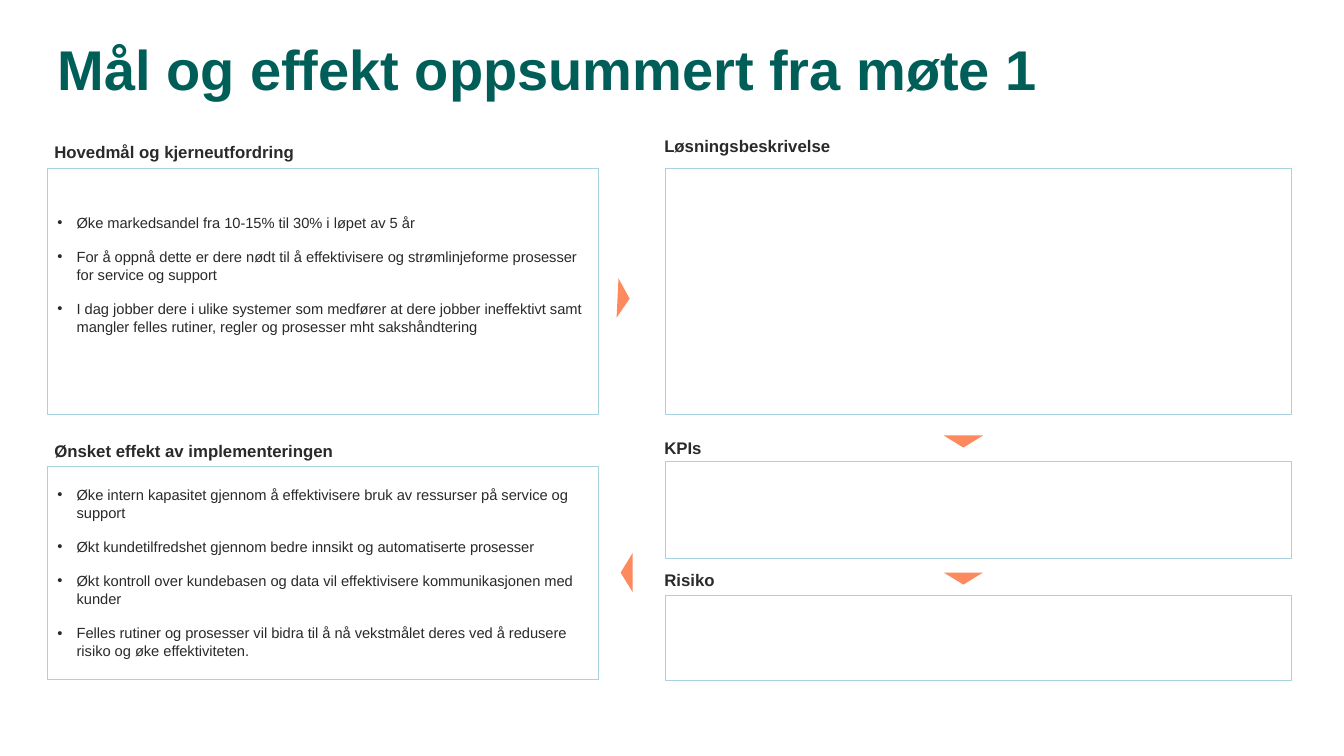
from lxml import etree
from pptx import Presentation
from pptx.dml.color import RGBColor
from pptx.enum.shapes import MSO_SHAPE
from pptx.enum.text import MSO_ANCHOR, MSO_AUTO_SIZE, PP_ALIGN
from pptx.oxml.ns import qn
from pptx.util import Inches, Pt

RECT = MSO_SHAPE.RECTANGLE
WEDGE = MSO_SHAPE.ISOSCELES_TRIANGLE
TOP, MIDDLE = MSO_ANCHOR.TOP, MSO_ANCHOR.MIDDLE
FIXED, GROW = MSO_AUTO_SIZE.NONE, MSO_AUTO_SIZE.SHAPE_TO_FIT_TEXT
LEFT = PP_ALIGN.LEFT

LEFT_X, LEFT_W = 0.47, 5.46
RIGHT_X, RIGHT_W = 6.6, 6.21
COLORS = {"title": "005E58", "text": "2B2929", "line": "A6D3DD", "arrow": "FC8A5E"}

GOALS = [
    "Øke markedsandel fra 10-15% til 30% i løpet av 5 år",
    "For å oppnå dette er dere nødt til å effektivisere og strømlinjeforme prosesser for service og support",
    "I dag jobber dere i ulike systemer som medfører at dere jobber ineffektivt samt mangler felles rutiner, regler og prosesser mht sakshåndtering",
]
EFFECTS = [
    "Øke intern kapasitet gjennom å effektivisere bruk av ressurser på service og support",
    "Økt kundetilfredshet gjennom bedre innsikt og automatiserte prosesser",
    "Økt kontroll over kundebasen og data vil effektivisere kommunikasjonen med kunder",
    "Felles rutiner og prosesser vil bidra til å nå vekstmålet deres ved å redusere risiko og øke effektiviteten.",
]
HEADS = [
    ("Hovedmål og kjerneutfordring", 0.44, 1.36, 2.61),
    ("Ønsket effekt av implementeringen", 0.44, 4.32, 3.04),
    ("Løsningsbeskrivelse", 6.49, 1.3, 1.87),
    ("KPIs", 6.49, 4.29, 0.58),
    ("Risiko", 6.49, 5.6, 0.71),
]
FRAMES = [(1.67, 2.44), (4.58, 0.96), (5.9, 0.85)]
ARROWS = [(5.99, 2.9, 92.8), (6.02, 5.62, 270), (9.36, 4.32, 180), (9.36, 5.68, 180)]


class Board:
    def __init__(self, slide):
        self.slide = slide
        self.font = "Arial"

    def color(self, name):
        return RGBColor.from_string(COLORS[name])

    def place(self, shape, x, y, w, h):
        shape.left, shape.top = Inches(x), Inches(y)
        shape.width, shape.height = Inches(w), Inches(h)

    def add_text(self, para, text, size, color="text", bold=False):
        para.alignment = LEFT
        run = para.add_run()
        run.text = text
        run.font.name = self.font
        run.font.size = Pt(size)
        run.font.bold = bold
        run.font.color.rgb = self.color(color)

    def edge(self, shape):
        shape.fill.background()
        shape.line.color.rgb = self.color("line")
        shape.line.width = Pt(0.25)

    def title(self, text, x, y, w, h):
        shape = self.slide.shapes.title
        self.place(shape, x, y, w, h)
        frame = shape.text_frame
        frame.auto_size = FIXED
        frame.vertical_anchor = TOP
        para = frame.paragraphs[0]
        para.line_spacing = 0.9
        self.add_text(para, text, 40, "title", True)

    def head(self, text, x, y, w):
        box = self.slide.shapes.add_textbox(Inches(x), Inches(y), Inches(w), Inches(0.3))
        frame = box.text_frame
        frame.word_wrap = False
        frame.auto_size = GROW
        self.add_text(frame.paragraphs[0], text, 12, bold=True)

    def bullets(self, index, items, y, h, bottom=0.05):
        shape = self.slide.placeholders[index]
        self.place(shape, LEFT_X, y, LEFT_W, h)
        self.edge(shape)
        frame = shape.text_frame
        frame.auto_size = FIXED
        frame.vertical_anchor = MIDDLE
        frame.margin_bottom = Inches(bottom)
        for i, item in enumerate(items):
            para = frame.add_paragraph() if i else frame.paragraphs[0]
            props = para._p.get_or_add_pPr()
            props.set("marL", str(Inches(0.19)))
            props.set("indent", str(Inches(-0.19)))
            etree.SubElement(props, qn("a:buFont")).set("typeface", self.font)
            etree.SubElement(props, qn("a:buChar")).set("char", "•")
            para.space_before = Pt(12 if i else 0)
            self.add_text(para, item, 10.5)

    def shape(self, kind, x, y, w, h):
        shape = self.slide.shapes.add_shape(kind, Inches(x), Inches(y), Inches(w), Inches(h))
        shape.shadow.inherit = False
        return shape

    def frame(self, y, h):
        self.edge(self.shape(RECT, RIGHT_X, y, RIGHT_W, h))

    def arrow(self, x, y, turn):
        shape = self.shape(WEDGE, x, y, 0.39, 0.12)
        shape.rotation = turn
        shape.fill.solid()
        shape.fill.fore_color.rgb = self.color("arrow")
        shape.line.fill.background()


def main():
    deck = Presentation()
    deck.slide_width, deck.slide_height = Inches(13.33), Inches(7.5)
    board = Board(deck.slides.add_slide(deck.slide_layouts[3]))
    board.title("Mål og effekt oppsummert fra møte 1", 0.47, 0.37, 11.5, 0.93)
    board.bullets(1, GOALS, 1.67, 2.44, bottom=0.39)
    board.bullets(2, EFFECTS, 4.62, 2.12)
    for spot in FRAMES:
        board.frame(*spot)
    for head in HEADS:
        board.head(*head)
    for arrow in ARROWS:
        board.arrow(*arrow)
    deck.save("out.pptx")


if __name__ == "__main__":
    main()
